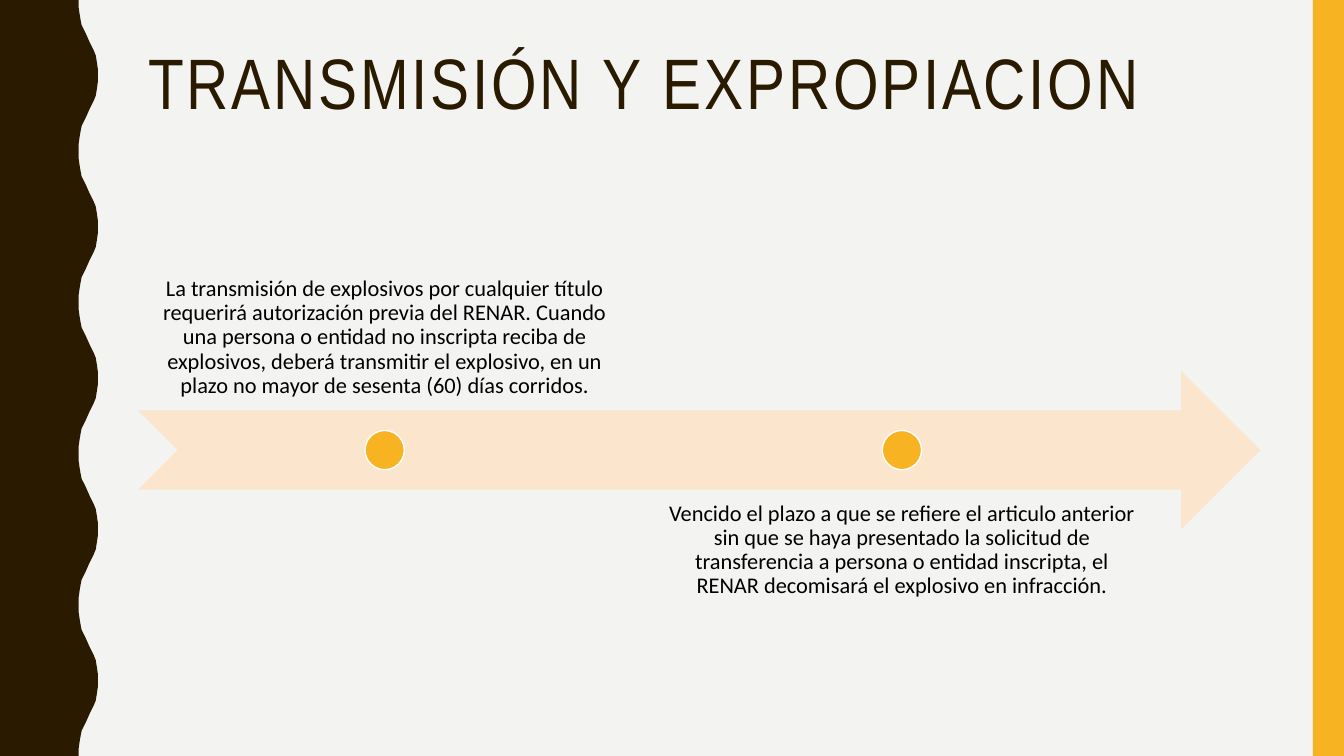
from pptx import Presentation
from pptx.dml.color import RGBColor
from pptx.enum.shapes import MSO_SHAPE
from pptx.enum.text import MSO_ANCHOR, MSO_AUTO_SIZE, PP_ALIGN
from pptx.util import Inches, Pt

RECTANGLE, OVAL = MSO_SHAPE.RECTANGLE, MSO_SHAPE.OVAL
ARROW = MSO_SHAPE.NOTCHED_RIGHT_ARROW
TOP, BOTTOM = MSO_ANCHOR.TOP, MSO_ANCHOR.BOTTOM

PAPER = RGBColor(0xF3, 0xF3, 0xF2)
BROWN = RGBColor(0x2A, 0x1A, 0x00)
AMBER = RGBColor(0xF8, 0xB3, 0x23)
PEACH = RGBColor(0xFC, 0xE5, 0xCD)
WHITE = RGBColor(0xFF, 0xFF, 0xFF)
BLACK = RGBColor(0x00, 0x00, 0x00)

# Content
TITLE = "TRANSMISIÓN Y EXPROPIACION"
# Text, anchor, box top
STEPS = [
    ("La transmisión de explosivos por cualquier título requerirá autorización "
     "previa del RENAR. Cuando una persona o entidad no inscripta reciba de "
     "explosivos, deberá transmitir el explosivo, en un plazo no mayor de "
     "sesenta (60) días corridos.", BOTTOM, 2.5),
    ("Vencido el plazo a que se refiere el articulo anterior sin que se haya "
     "presentado la solicitud de transferencia a persona o entidad inscripta, "
     "el RENAR decomisará el explosivo en infracción.", TOP, 4.86),
]

# Layout, in inches
WIDTH, HEIGHT = 13.33, 7.5
LEFT, CONTENT_WIDTH = 1.37, 11.13
BAR_WIDTH = 0.31
ARROW_TOP, BAND_HEIGHT = 3.68, 1.57
STEP_WIDTH, STEP_PITCH = 4.89, 5.13
DOT_SIZE, TEXT_INSET = 0.39, 0.12
WAVE_PERIOD, WAVE_COUNT = 1.5, 5
# Wave edge from trough to crest, as (x, y)
HALF_WAVE = [(0.78, 0), (0.78, 0.07), (0.79, 0.14), (0.8, 0.2), (0.81, 0.25),
             (0.83, 0.29), (0.85, 0.33), (0.89, 0.42), (0.91, 0.46),
             (0.93, 0.5), (0.95, 0.55), (0.96, 0.61), (0.97, 0.68), (0.97, 0.75)]


def paint(shape, color, line=None):
    shape.shadow.inherit = False
    shape.fill.solid()
    shape.fill.fore_color.rgb = color
    if line is None:
        shape.line.fill.background()
    else:
        shape.line.color.rgb = line
        shape.line.width = Pt(1)


def add_block(page, kind, left, top, width, height, color, line=None):
    block = page.shapes.add_shape(
        kind, Inches(left), Inches(top), Inches(width), Inches(height))
    paint(block, color, line)


def add_wave(page):
    falling = [(x, WAVE_PERIOD - y) for x, y in reversed(HALF_WAVE[:-1])]
    edge = [(x, y + i * WAVE_PERIOD)
            for i in range(WAVE_COUNT) for x, y in HALF_WAVE + falling]
    points = [(Inches(x), Inches(y)) for x, y in edge + [(0, HEIGHT)]]
    outline = page.shapes.build_freeform(0, 0)
    outline.add_line_segments(points, close=True)
    paint(outline.convert_to_shape(), BROWN)


def format_para(para, align, font_name, size, color):
    para.alignment = align
    para.line_spacing = 0.9
    para.font.name = font_name
    para.font.size = Pt(size)
    para.font.color.rgb = color


def add_title(page):
    title = page.shapes.title
    title.left, title.top = Inches(LEFT), Inches(0.42)
    title.width, title.height = Inches(CONTENT_WIDTH), Inches(1.63)
    frame = title.text_frame
    frame.text = TITLE
    frame.word_wrap = True
    frame.auto_size = MSO_AUTO_SIZE.NONE
    frame.vertical_anchor = TOP
    para = frame.paragraphs[0]
    format_para(para, PP_ALIGN.LEFT, "Arial Narrow", 51, BROWN)
    # Letter spacing of 2 points
    para.runs[0].font._element.set("spc", "200")


def add_step(page, index, text, anchor, top):
    left = LEFT + index * STEP_PITCH
    box = page.shapes.add_textbox(
        Inches(left), Inches(top), Inches(STEP_WIDTH), Inches(BAND_HEIGHT))
    frame = box.text_frame
    frame.text = text
    frame.word_wrap = True
    frame.vertical_anchor = anchor
    frame.margin_left = frame.margin_right = Inches(TEXT_INSET)
    frame.margin_top = frame.margin_bottom = Inches(TEXT_INSET)
    format_para(frame.paragraphs[0], PP_ALIGN.CENTER, "Calibri", 16, BLACK)
    # Marker centred on the arrow
    add_block(page, OVAL, left + (STEP_WIDTH - DOT_SIZE) / 2,
              ARROW_TOP + (BAND_HEIGHT - DOT_SIZE) / 2,
              DOT_SIZE, DOT_SIZE, AMBER, WHITE)


def main():
    deck = Presentation()
    deck.slide_width, deck.slide_height = Inches(WIDTH), Inches(HEIGHT)
    page = deck.slides.add_slide(deck.slide_layouts[5])
    page.background.fill.solid()
    page.background.fill.fore_color.rgb = PAPER

    # Side decoration
    add_wave(page)
    add_block(page, RECTANGLE, WIDTH - BAR_WIDTH, 0, BAR_WIDTH, HEIGHT, AMBER)

    # Title and timeline
    add_title(page)
    add_block(page, ARROW, LEFT, ARROW_TOP, CONTENT_WIDTH, BAND_HEIGHT, PEACH)
    for index, (text, anchor, top) in enumerate(STEPS):
        add_step(page, index, text, anchor, top)

    deck.save("out.pptx")


if __name__ == "__main__":
    main()
